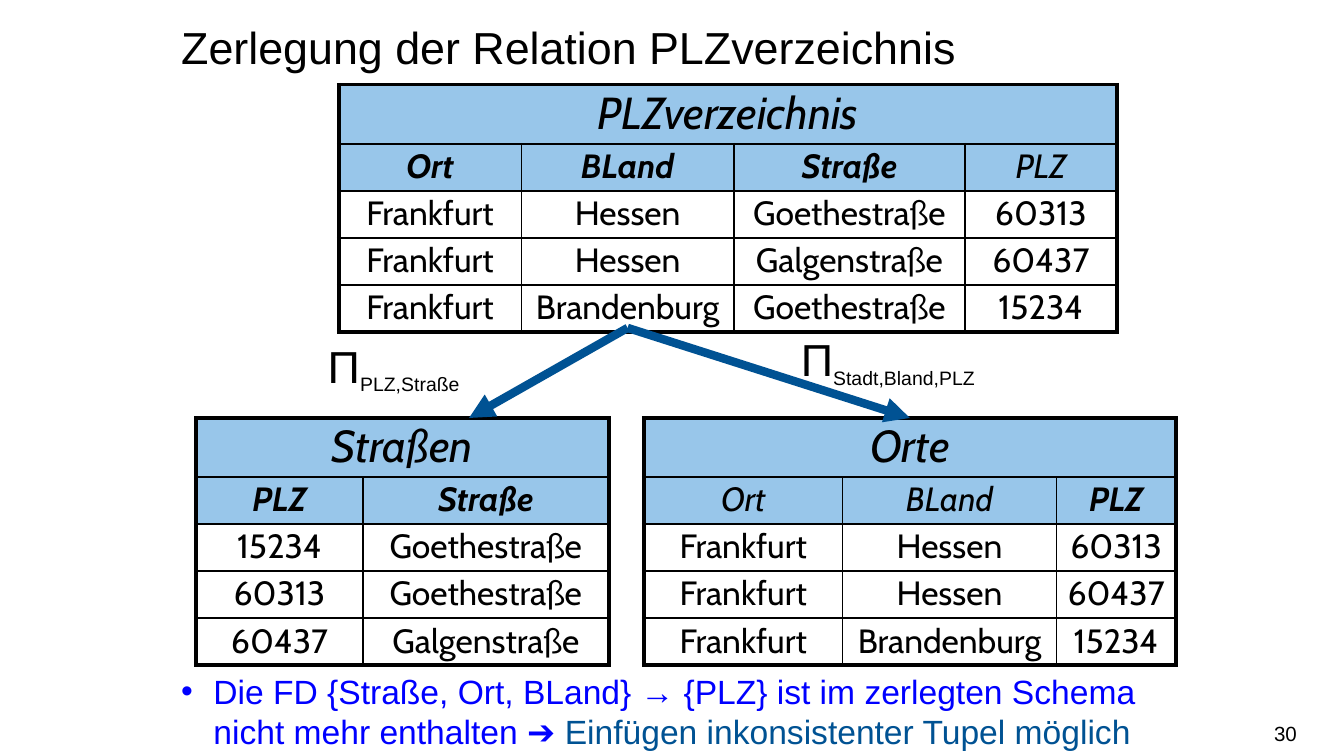
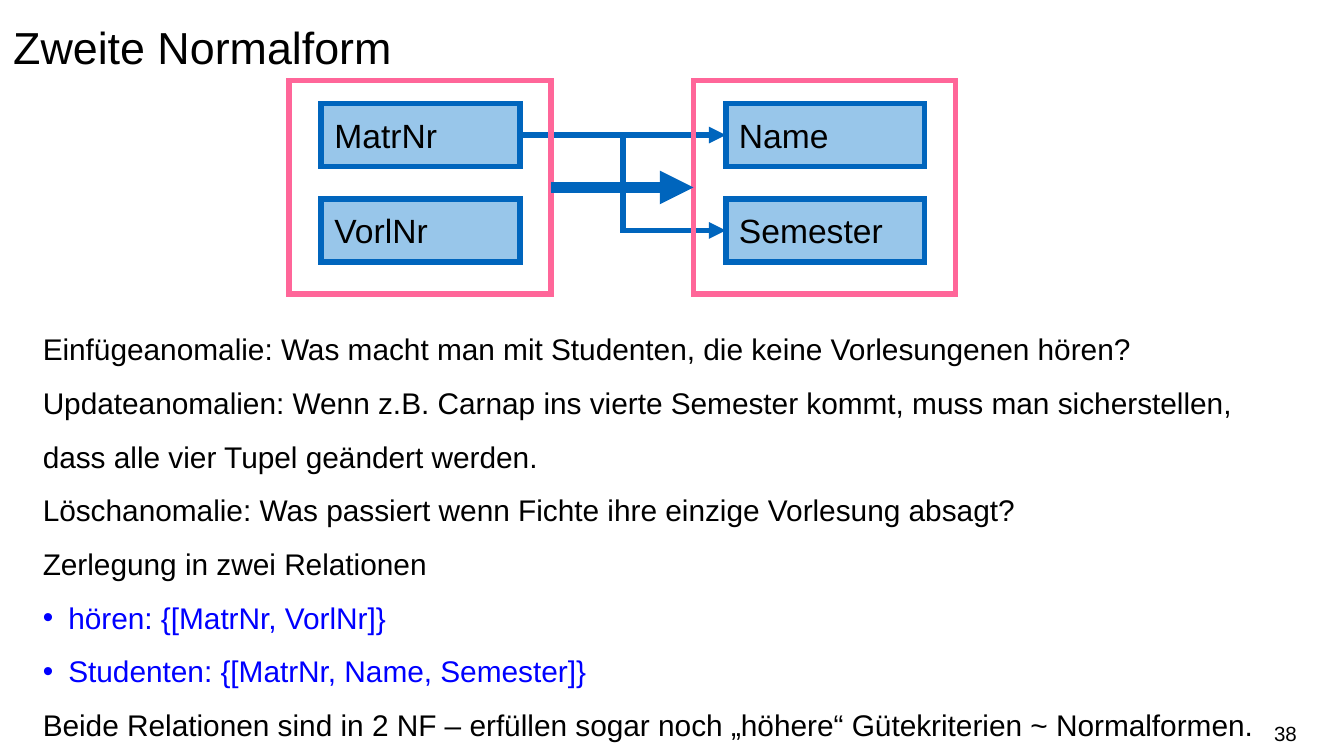
"""Build two lecture slides on decomposing relations and the second normal form."""
from dataclasses import dataclass

from lxml.etree import SubElement
from pptx import Presentation
from pptx.dml.color import RGBColor
from pptx.enum.shapes import MSO_CONNECTOR, MSO_SHAPE
from pptx.enum.text import MSO_ANCHOR, PP_ALIGN
from pptx.oxml import parse_xml
from pptx.oxml.ns import nsdecls, qn
from pptx.util import Inches, Pt

COLORS = {
    "black": "000000",
    "header": "98C6EA",
    "blue": "0065BD",
    "dark": "005293",
    "text_blue": "0000FF",
    "pink": "FF6699",
}
TEXT_FONT = "Arial"
TABLE_FONT = "Cabin"
TITLE_ROW_HEIGHT = 0.44
ROW_HEIGHT = 0.35
OUTER_BORDER = 2.25
INNER_BORDER = 1


@dataclass(frozen=True)
class Area:
    left: float
    top: float
    width: float
    height: float

    def lengths(self) -> list:
        return [Inches(value) for value in (self.left, self.top, self.width, self.height)]


@dataclass(frozen=True)
class Span:
    text: str
    size: float
    color: str = "black"
    font: str = TEXT_FONT
    bold: bool = False
    italic: bool = False
    subscript: bool = False


@dataclass(frozen=True)
class Line:
    spans: tuple[Span, ...]
    spacing: float = 1
    bullet_indent: float = 0
    align: PP_ALIGN = PP_ALIGN.LEFT


@dataclass(frozen=True)
class Relation:
    name: str
    left: float
    top: float
    widths: tuple[float, ...]
    columns: tuple[str, ...]
    keys: tuple[str, ...]
    rows: tuple[tuple[str, ...], ...]


@dataclass(frozen=True)
class Projection:
    attributes: str
    area: Area
    arrow_tip: float


RELATIONS = (
    Relation(
        "PLZverzeichnis", 2.52, 0.63, (1.36, 1.58, 1.72, 1.13),
        ("Ort", "BLand", "Straße", "PLZ"), ("Ort", "BLand", "Straße"),
        (
            ("Frankfurt", "Hessen", "Goethestraße", "60313"),
            ("Frankfurt", "Hessen", "Galgenstraße", "60437"),
            ("Frankfurt", "Brandenburg", "Goethestraße", "15234"),
        ),
    ),
    Relation(
        "Straßen", 1.46, 3.11, (1.24, 1.83),
        ("PLZ", "Straße"), ("PLZ", "Straße"),
        (("15234", "Goethestraße"), ("60313", "Goethestraße"), ("60437", "Galgenstraße")),
    ),
    Relation(
        "Orte", 4.79, 3.11, (1.48, 1.59, 0.89),
        ("Ort", "BLand", "PLZ"), ("PLZ",),
        (
            ("Frankfurt", "Hessen", "60313"),
            ("Frankfurt", "Hessen", "60437"),
            ("Frankfurt", "Brandenburg", "15234"),
        ),
    ),
)
PROJECTIONS = (
    Projection("PLZ,Straße", Area(2.34, 2.47, 1.32, 0.5), 3.49),
    Projection("Stadt,Bland,PLZ", Area(5.86, 2.42, 1.68, 0.5), 6.77),
)
ATTRIBUTE_GROUPS = (("MatrNr", "VorlNr"), ("Name", "Semester"))
GROUP_STEP = 3.01
ATTRIBUTE_STEP = 0.71
ANOMALIES = (
    "Einfügeanomalie: Was macht man mit Studenten, die keine Vorlesungenen hören?",
    "Updateanomalien: Wenn z.B. Carnap ins vierte Semester kommt, muss man sicherstellen, "
    "dass alle vier Tupel geändert werden.",
    "Löschanomalie: Was passiert wenn Fichte ihre einzige Vorlesung absagt?",
    "Zerlegung in zwei Relationen",
)
NEW_RELATIONS = ("hören: {[MatrNr, VorlNr]}", "Studenten: {[MatrNr, Name, Semester]}")
CONCLUSION = (
    "Beide Relationen sind in 2 NF – erfüllen sogar noch „höhere“ "
    "Gütekriterien ~ Normalformen."
)


def rgb(name: str) -> RGBColor:
    return RGBColor.from_string(COLORS[name])


def write_line(para, line: Line) -> None:
    if line.bullet_indent:
        properties = para._p.get_or_add_pPr()
        indent = Inches(line.bullet_indent)
        properties.set("marL", str(indent))
        properties.set("indent", str(-indent))
        SubElement(properties, qn("a:buFont")).set("typeface", TEXT_FONT)
        SubElement(properties, qn("a:buChar")).set("char", "•")
    para.alignment = line.align
    para.line_spacing = line.spacing
    for span in line.spans:
        run = para.add_run()
        run.text = span.text
        run.font.size = Pt(span.size)
        run.font.name = span.font
        run.font.bold = span.bold
        run.font.italic = span.italic
        run.font.color.rgb = rgb(span.color)
        if span.subscript:
            run._r.get_or_add_rPr().set("baseline", "-25000")


def write_lines(frame, lines: list[Line]) -> None:
    frame.word_wrap = True
    for index, line in enumerate(lines):
        para = frame.add_paragraph() if index else frame.paragraphs[0]
        write_line(para, line)


def add_text(page, area: Area, lines: list[Line]):
    box = page.shapes.add_textbox(*area.lengths())
    write_lines(box.text_frame, lines)
    return box


def add_page(deck, title: str, title_area: Area, number: int):
    page = deck.slides.add_slide(deck.slide_layouts[6])
    add_text(page, title_area, [Line((Span(title, 24),), spacing=1.25)])
    number_line = Line((Span(str(number), 11),), align=PP_ALIGN.RIGHT)
    frame = add_text(page, Area(7.41, 5.31, 2.24, 0.3), [number_line]).text_frame
    frame.margin_left = frame.margin_right = 0
    frame.vertical_anchor = MSO_ANCHOR.MIDDLE
    return page


def set_borders(cell, outer_sides: dict[str, bool]) -> None:
    properties = cell._tc.get_or_add_tcPr()
    for index, (side, outer) in enumerate(outer_sides.items()):
        width = Pt(OUTER_BORDER if outer else INNER_BORDER)
        border = parse_xml(
            f'<a:ln{side} {nsdecls("a")} w="{width}"><a:solidFill>'
            f'<a:srgbClr val="{COLORS["black"]}"/></a:solidFill></a:ln{side}>'
        )
        properties.insert(index, border)


def add_relation(page, relation: Relation) -> None:
    column_count = len(relation.columns)
    title_row = (relation.name,) + ("",) * (column_count - 1)
    contents = (title_row, relation.columns, *relation.rows)
    heights = [TITLE_ROW_HEIGHT] + [ROW_HEIGHT] * (len(contents) - 1)
    area = Area(relation.left, relation.top, sum(relation.widths), sum(heights))
    table = page.shapes.add_table(len(contents), column_count, *area.lengths()).table
    table.first_row = table.horz_banding = False
    for column, width in zip(table.columns, relation.widths):
        column.width = Inches(width)
    for row, height in zip(table.rows, heights):
        row.height = Inches(height)
    table.cell(0, 0).merge(table.cell(0, column_count - 1))
    for row_index, texts in enumerate(contents):
        is_header = row_index < 2
        for column_index, text in enumerate(texts):
            cell = table.cell(row_index, column_index)
            cell.margin_left = cell.margin_right = Inches(0.07)
            cell.margin_top = cell.margin_bottom = Inches(0.04)
            if is_header:
                cell.fill.solid()
                cell.fill.fore_color.rgb = rgb("header")
            else:
                cell.fill.background()
            set_borders(cell, {
                "L": column_index == 0,
                "R": column_index == column_count - 1 or row_index == 0,
                "T": row_index == 0,
                "B": row_index == len(contents) - 1,
            })
            if text:
                span = Span(
                    text, 18 if row_index else 24, font=TABLE_FONT, italic=is_header,
                    bold=row_index == 1 and text in relation.keys,
                )
                para = cell.text_frame.paragraphs[0]
                write_line(para, Line((span,), 0.9, align=PP_ALIGN.CENTER))


def style_outline(shape, color: str, width: float):
    shape.line.color.rgb = rgb(color)
    shape.line.width = Pt(width)
    outline = shape.line._get_or_add_ln()
    SubElement(outline, qn("a:miter")).set("lim", "800000")
    return outline


def add_arrow(page, start: tuple[float, float], end: tuple[float, float], color: str,
              width: float, kind=MSO_CONNECTOR.STRAIGHT):
    points = [Inches(value) for value in (*start, *end)]
    arrow = page.shapes.add_connector(kind, *points)
    outline = style_outline(arrow, color, width)
    SubElement(outline, qn("a:tailEnd")).set("type", "triangle")
    SubElement(arrow._element.spPr, qn("a:effectLst"))
    return arrow


def join_boxes(page, source, target, width: float, kind=MSO_CONNECTOR.STRAIGHT) -> None:
    arrow = add_arrow(page, (0, 0), (1, 1), "blue", width, kind)
    arrow.begin_connect(source, 3)
    arrow.end_connect(target, 1)


def add_box(page, area: Area, line_color: str, label: str = ""):
    box = page.shapes.add_shape(MSO_SHAPE.RECTANGLE, *area.lengths())
    box.shadow.inherit = False
    style_outline(box, line_color, 3)
    if label:
        box.fill.solid()
        box.fill.fore_color.rgb = rgb("header")
        box.text_frame.vertical_anchor = MSO_ANCHOR.MIDDLE
        write_lines(box.text_frame, [Line((Span(label, 18),))])
    else:
        box.fill.background()
    return box


def build_decomposition(deck) -> None:
    page = add_page(deck, "Zerlegung der Relation PLZverzeichnis", Area(1.25, 0, 7.5, 0.63), 30)
    for relation in RELATIONS:
        add_relation(page, relation)
    for projection in PROJECTIONS:
        add_arrow(page, (4.67, 2.44), (projection.arrow_tip, 3.11), "dark", 4.5)
        spans = (Span("Π", 24), Span(projection.attributes, 18, subscript=True))
        add_text(page, projection.area, [Line(spans)])
    dependency = (
        Span("Die FD {Straße, Ort, BLand} → {PLZ} ist im zerlegten Schema "
             "nicht mehr enthalten ➔ ", 18, "text_blue"),
        Span("Einfügen inkonsistenter Tupel möglich", 18, "dark"),
    )
    add_text(page, Area(1.25, 4.94, 7.5, 0.68), [Line(dependency, bullet_indent=0.24)])


def build_normal_form(deck) -> None:
    page = add_page(deck, "Zweite Normalform", Area(0, 0, 10, 0.94), 38)
    lines = [Line((Span(text, 16),), 1.5) for text in ANOMALIES]
    lines += [Line((Span(text, 16, "text_blue"),), 1.5, 0.19) for text in NEW_RELATIONS]
    lines.append(Line((Span(CONCLUSION, 16),), 1.5))
    add_text(page, Area(0.22, 2.28, 9.44, 3.34), lines)
    boxes = {}
    for group_index, labels in enumerate(ATTRIBUTE_GROUPS):
        left = 2.39 + group_index * GROUP_STEP
        for index, label in enumerate(labels):
            area = Area(left, 0.77 + index * ATTRIBUTE_STEP, 1.48, 0.47)
            boxes[label] = add_box(page, area, "blue", label)
    join_boxes(page, boxes["MatrNr"], boxes["Name"], 3)
    join_boxes(page, boxes["MatrNr"], boxes["Semester"], 3, MSO_CONNECTOR.ELBOW)
    frames = [
        add_box(page, Area(2.15 + index * GROUP_STEP, 0.6, 1.95, 1.59), "pink")
        for index in range(len(ATTRIBUTE_GROUPS))
    ]
    join_boxes(page, *frames, 6)


def main() -> None:
    deck = Presentation()
    deck.slide_width = Inches(10)
    deck.slide_height = deck.slide_width * 9 // 16
    build_decomposition(deck)
    build_normal_form(deck)
    deck.save("out.pptx")


if __name__ == "__main__":
    main()
